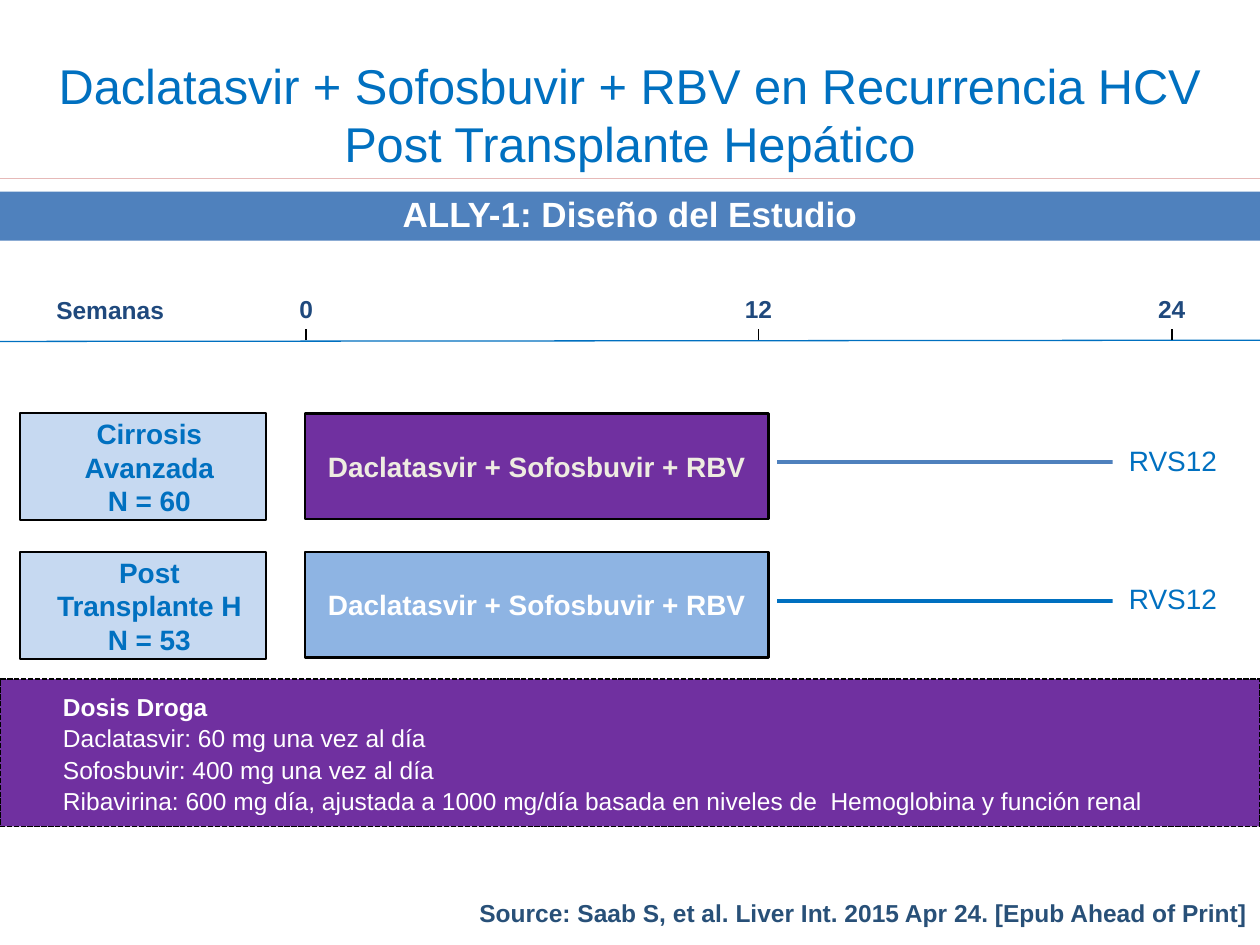
"""Build the ALLY-1 study design slide."""
from dataclasses import dataclass
from typing import Optional

from lxml.etree import SubElement
from pptx import Presentation
from pptx.dml.color import RGBColor
from pptx.enum.dml import MSO_LINE
from pptx.enum.shapes import MSO_CONNECTOR, MSO_SHAPE
from pptx.enum.text import MSO_ANCHOR, MSO_AUTO_SIZE, PP_ALIGN
from pptx.oxml.ns import qn
from pptx.shapes.autoshape import Shape
from pptx.slide import Slide
from pptx.util import Inches, Pt

WHITE = RGBColor(0xFF, 0xFF, 0xFF)
BLACK = RGBColor(0x00, 0x00, 0x00)
BLUE = RGBColor(0x00, 0x70, 0xC0)
STEEL = RGBColor(0x4F, 0x81, 0xBD)
NAVY = RGBColor(0x1F, 0x49, 0x7D)
SOURCE_BLUE = RGBColor(0x28, 0x50, 0x78)
PURPLE = RGBColor(0x70, 0x30, 0xA0)
PALE_BLUE = RGBColor(0xC6, 0xD9, 0xF1)
SKY = RGBColor(0x8E, 0xB4, 0xE3)
CREAM = RGBColor(0xEE, 0xEC, 0xE1)
PINK = RGBColor(0xE6, 0xB9, 0xB8)

FONT = "Arial"
AXIS_TOP = 2.7


@dataclass
class TextStyle:
    size: float
    color: RGBColor
    bold: bool = True
    align: PP_ALIGN = PP_ALIGN.CENTER
    anchor: MSO_ANCHOR = MSO_ANCHOR.MIDDLE
    left_inset: float = 0.1


@dataclass
class Box:
    left: float
    top: float
    width: float
    height: float
    fill: Optional[RGBColor] = None
    border: float = 0


@dataclass
class Arm:
    top: float
    patients: list[str]
    treatment_fill: RGBColor
    treatment_color: RGBColor
    follow_up_color: RGBColor


@dataclass
class Week:
    label: str
    center: float


ARMS = [
    Arm(3.28, ["Cirrosis Avanzada", "N = 60"], PURPLE, CREAM, STEEL),
    Arm(4.38, ["Post", "Transplante H", "N = 53"], SKY, WHITE, BLUE),
]
WEEKS = [Week("0", 2.43), Week("12", 6.02), Week("24", 9.3)]
DOSES = [
    "Dosis Droga",
    "Daclatasvir: 60 mg una vez al día",
    "Sofosbuvir: 400 mg una vez al día",
    "Ribavirina: 600 mg día, ajustada a 1000 mg/día basada en niveles de  Hemoglobina y función renal",
]


def write(shape: Shape, lines: list[str], style: TextStyle) -> None:
    """Fill a shape with evenly styled paragraphs."""
    frame = shape.text_frame
    frame.text = "\n".join(lines)
    frame.word_wrap = True
    frame.auto_size = MSO_AUTO_SIZE.NONE
    frame.vertical_anchor = style.anchor
    frame.margin_left = Inches(style.left_inset)
    for paragraph in frame.paragraphs:
        paragraph.alignment = style.align
        paragraph.font.name = FONT
        paragraph.font.size = Pt(style.size)
        paragraph.font.bold = style.bold
        paragraph.font.color.rgb = style.color


def add_box(slide: Slide, box: Box, lines: list[str], style: TextStyle) -> Shape:
    """Add a filled rectangle, or a plain text box when there is no fill."""
    place = [Inches(v) for v in (box.left, box.top, box.width, box.height)]
    if box.fill is None:
        shape = slide.shapes.add_textbox(*place)
    else:
        shape = slide.shapes.add_shape(MSO_SHAPE.RECTANGLE, *place)
        shape.shadow.inherit = False
        shape.fill.solid()
        shape.fill.fore_color.rgb = box.fill
        if box.border:
            shape.line.color.rgb = BLACK
            shape.line.width = Pt(box.border)
        else:
            shape.line.fill.background()
    write(shape, lines, style)
    return shape


def add_line(slide: Slide, start: tuple[float, float], end: tuple[float, float],
             color: RGBColor, width: float) -> None:
    """Add a straight line without a shadow."""
    points = [Inches(v) for v in (*start, *end)]
    line = slide.shapes.add_connector(MSO_CONNECTOR.STRAIGHT, *points)
    line.line.color.rgb = color
    line.line.width = Pt(width)
    SubElement(line._element.spPr, qn("a:effectLst"))


def add_heading(slide: Slide) -> None:
    """Place the title, its rule and the study banner."""
    title = slide.shapes.title
    title.left, title.top, title.width, title.height = 0, 0, Inches(10), Inches(1.42)
    write(title, ["Daclatasvir + Sofosbuvir + RBV en Recurrencia HCV", "Post Transplante Hepático"],
          TextStyle(27.9, BLUE, bold=False, anchor=MSO_ANCHOR.BOTTOM))
    for paragraph in title.text_frame.paragraphs:
        paragraph.space_before = Pt(0)
    add_line(slide, (0, 1.42), (10, 1.42), PINK, 0.5)
    add_box(slide, Box(0, 1.52, 10, 0.39, STEEL), ["ALLY-1: Diseño del Estudio"],
            TextStyle(20, WHITE, anchor=MSO_ANCHOR.BOTTOM))


def add_timeline(slide: Slide) -> None:
    """Draw the week axis with its ticks and labels."""
    label_style = TextStyle(14, NAVY)
    add_box(slide, Box(0.16, 2.26, 1.43, 0.4), ["Semanas"], label_style)
    add_line(slide, (0, AXIS_TOP + 0.01), (10, AXIS_TOP), BLUE, 0.75)
    for week in WEEKS:
        add_box(slide, Box(week.center - 0.3, 2.17, 0.6, 0.56), [week.label], label_style)
        add_line(slide, (week.center, AXIS_TOP), (week.center, AXIS_TOP - 0.09), BLACK, 1)


def add_arm(slide: Slide, arm: Arm) -> None:
    """Draw the patients, treatment and follow-up of one study arm."""
    add_box(slide, Box(0.16, arm.top, 1.95, 0.85, PALE_BLUE, 1), arm.patients,
            TextStyle(16, BLUE, left_inset=0.2))
    add_box(slide, Box(2.42, arm.top, 3.68, 0.84, arm.treatment_fill, 1.5),
            ["Daclatasvir + Sofosbuvir + RBV"], TextStyle(16, arm.treatment_color))
    follow_up_top = arm.top + 0.39
    add_line(slide, (6.17, follow_up_top), (8.83, follow_up_top), arm.follow_up_color, 2.25)
    add_box(slide, Box(8.83, arm.top + 0.15, 0.96, 0.44, WHITE), ["RVS12"],
            TextStyle(16, BLUE, bold=False))


def add_doses(slide: Slide) -> None:
    """Draw the dose panel with its bold heading."""
    panel = add_box(slide, Box(0, 5.39, 10, 1.17, PURPLE, 1), DOSES,
                    TextStyle(14, WHITE, bold=False, align=PP_ALIGN.LEFT, left_inset=0.5))
    panel.line.dash_style = MSO_LINE.SQUARE_DOT
    for paragraph in panel.text_frame.paragraphs:
        paragraph.line_spacing = Pt(18)
    panel.text_frame.paragraphs[0].font.bold = True


def main() -> None:
    """Assemble and save the slide."""
    presentation = Presentation()
    presentation.slide_width, presentation.slide_height = Inches(10), Inches(7.5)
    slide = presentation.slides.add_slide(presentation.slide_layouts[5])
    add_heading(slide)
    add_timeline(slide)
    for arm in ARMS:
        add_arm(slide, arm)
    add_doses(slide)
    add_box(slide, Box(0.33, 7.07, 9.67, 0.35),
            ["Source: Saab S, et al. Liver Int. 2015 Apr 24. [Epub Ahead of Print]"],
            TextStyle(14, SOURCE_BLUE, align=PP_ALIGN.RIGHT))
    presentation.save("out.pptx")


if __name__ == "__main__":
    main()
